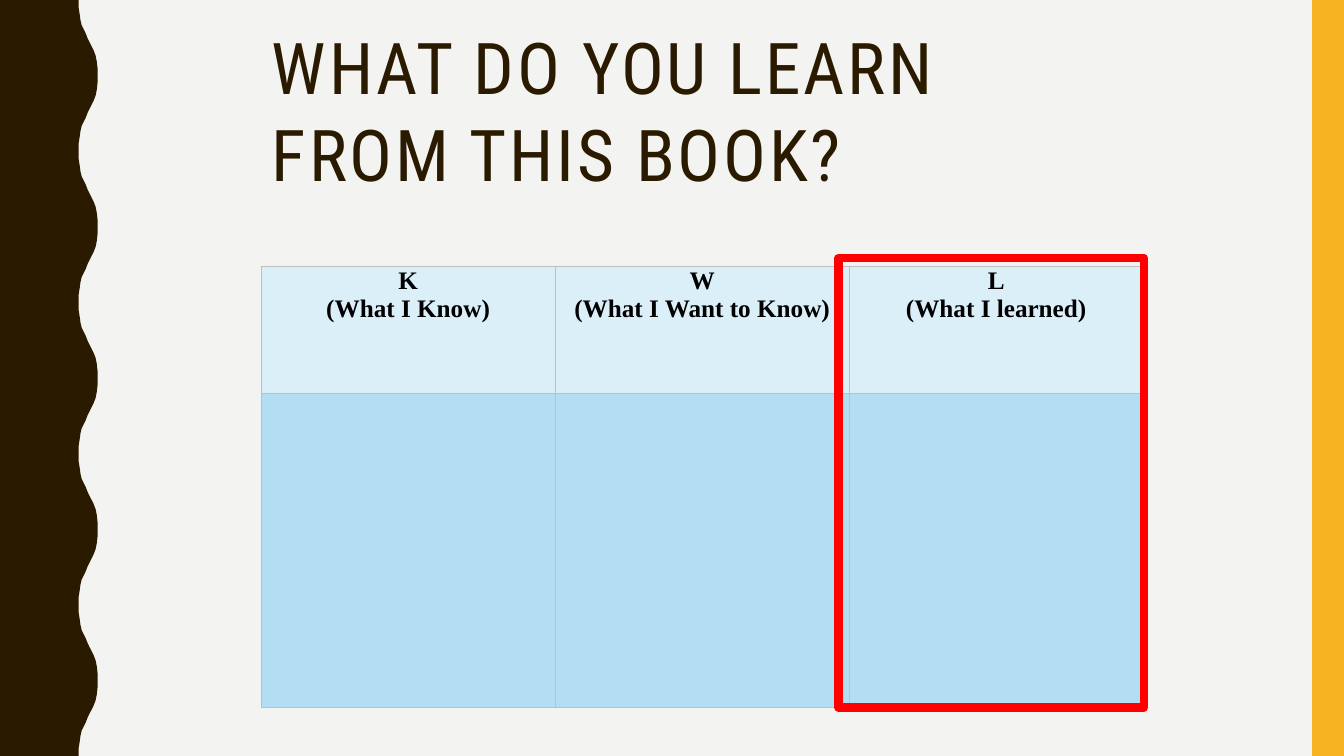
from dataclasses import dataclass
from typing import Optional

import pptx
import pptx.dml.color
import pptx.enum.shapes
import pptx.enum.text
import pptx.oxml
import pptx.oxml.ns
import pptx.util
from pptx.util import Cm

COLORS = {
    "background": "F3F3F2",
    "brown": "2A1A00",
    "gold": "F8B323",
    "header": "DBEFF9",
    "body": "B3DDF2",
    "border": "BFBFBF",
    "red": "FF0000",
    "black": "000000",
}
SLIDE_W, SLIDE_H = 33.87, 19.05
WAVE_COUNT = 5
WAVE_H = SLIDE_H / WAVE_COUNT
HALF_WAVE = [
    (1.98, 0), (1.98, 0.18), (2.01, 0.36), (2.03, 0.51), (2.06, 0.64),
    (2.11, 0.74), (2.16, 0.84), (2.21, 0.97), (2.26, 1.07), (2.31, 1.17),
    (2.36, 1.27), (2.41, 1.4), (2.44, 1.55), (2.46, 1.73), (2.46, 1.9),
]


@dataclass
class Column:
    letter: str
    prompt: str


@dataclass
class Box:
    left: float
    top: float
    width: float
    height: float
    fill: Optional[str] = None
    line: Optional[str] = None
    weight: float = 0


COLUMNS = [
    Column("K", "(What I Know)"),
    Column("W", "(What I Want to Know)"),
    Column("L", "(What I learned)"),
]
BOXES = [
    Box(33.07, 0, 0.8, SLIDE_H, fill="gold"),
    Box(21.13, 6.5, 7.7, 11.33, line="red", weight=6),
]


def rgb(name: str) -> pptx.dml.color.RGBColor:
    return pptx.dml.color.RGBColor.from_string(COLORS[name])


def paint(fill, name: str) -> None:
    fill.solid()
    fill.fore_color.rgb = rgb(name)


def write(p, text: str, *, font: str, size: float, color: str,
          bold: bool = False, align: str = "LEFT", spacing: float = 0) -> None:
    p.alignment = getattr(pptx.enum.text.PP_ALIGN, align)
    r = p.add_run()
    r.text = text
    r.font.name = font
    r.font.size = pptx.util.Pt(size)
    r.font.bold = bold
    r.font.color.rgb = rgb(color)
    if spacing:
        r.font._element.set("spc", str(int(spacing * 100)))


def draw_wave(s) -> None:
    back = [(x, WAVE_H - y) for x, y in reversed(HALF_WAVE[1:-1])]
    edge = [(x, y + i * WAVE_H) for i in range(WAVE_COUNT) for x, y in HALF_WAVE + back]
    points = edge + [(HALF_WAVE[0][0], SLIDE_H), (0, SLIDE_H)]
    builder = s.shapes.build_freeform(0, 0)
    builder.add_line_segments([(Cm(x), Cm(y)) for x, y in points], close=True)
    sp = builder.convert_to_shape()
    sp.shadow.inherit = False
    paint(sp.fill, "brown")
    sp.line.fill.background()


def draw_box(s, box: Box) -> None:
    sp = s.shapes.add_shape(
        pptx.enum.shapes.MSO_SHAPE.RECTANGLE,
        Cm(box.left), Cm(box.top), Cm(box.width), Cm(box.height))
    sp.shadow.inherit = False
    if box.fill:
        paint(sp.fill, box.fill)
    else:
        sp.fill.background()
    if box.line:
        sp.line.width = pptx.util.Pt(box.weight)
        paint(sp.line.fill, box.line)
        ln = sp.line._get_or_add_ln()
        ln.append(pptx.oxml.parse_xml(f'<a:round {pptx.oxml.ns.nsdecls("a")}/>'))
    else:
        sp.line.fill.background()


def format_cell(cell, fill: str) -> None:
    cell.margin_left = cell.margin_right = Cm(0.18)
    cell.margin_top = cell.margin_bottom = 0
    tc_pr = cell._tc.get_or_add_tcPr()
    for side in ("lnL", "lnR", "lnT", "lnB"):
        tc_pr.append(pptx.oxml.parse_xml(
            f'<a:{side} {pptx.oxml.ns.nsdecls("a")} w="12700"><a:solidFill>'
            f'<a:srgbClr val="{COLORS["border"]}"/></a:solidFill></a:{side}>'))
    paint(cell.fill, fill)


def draw_table(s) -> None:
    table = s.shapes.add_table(
        2, len(COLUMNS), Cm(6.58), Cm(6.72), Cm(22.23), Cm(11.1)).table
    table.rows[0].height, table.rows[1].height = Cm(3.2), Cm(7.9)
    for i, column in enumerate(COLUMNS):
        table.columns[i].width = Cm(7.41)
        head = table.cell(0, i)
        format_cell(head, "header")
        format_cell(table.cell(1, i), "body")
        tf = head.text_frame
        for p, text in ((tf.paragraphs[0], column.letter),
                        (tf.add_paragraph(), column.prompt)):
            write(p, text, font="Times New Roman", size=18, color="black",
                  bold=True, align="CENTER")


def draw_title(s) -> None:
    title = s.shapes.title
    title.left, title.top, title.width, title.height = Cm(6.6), Cm(0.43), Cm(18.39), Cm(4.62)
    tf = title.text_frame
    tf.word_wrap = True
    tf.auto_size = pptx.enum.text.MSO_AUTO_SIZE.NONE
    tf.vertical_anchor = pptx.enum.text.MSO_ANCHOR.MIDDLE
    p = tf.paragraphs[0]
    p.line_spacing = 1.02
    write(p, "WHAT DO YOU LEARN FROM THIS BOOK?", font="Roboto Condensed",
          size=51, color="brown", spacing=2)


def main() -> None:
    prs = pptx.Presentation()
    prs.slide_width, prs.slide_height = Cm(SLIDE_W), Cm(SLIDE_H)
    s = prs.slides.add_slide(prs.slide_layouts.get_by_name("Title Only"))
    paint(s.background.fill, "background")
    draw_title(s)
    draw_wave(s)
    draw_table(s)
    for box in BOXES:
        draw_box(s, box)
    prs.save("out.pptx")


if __name__ == "__main__":
    main()
